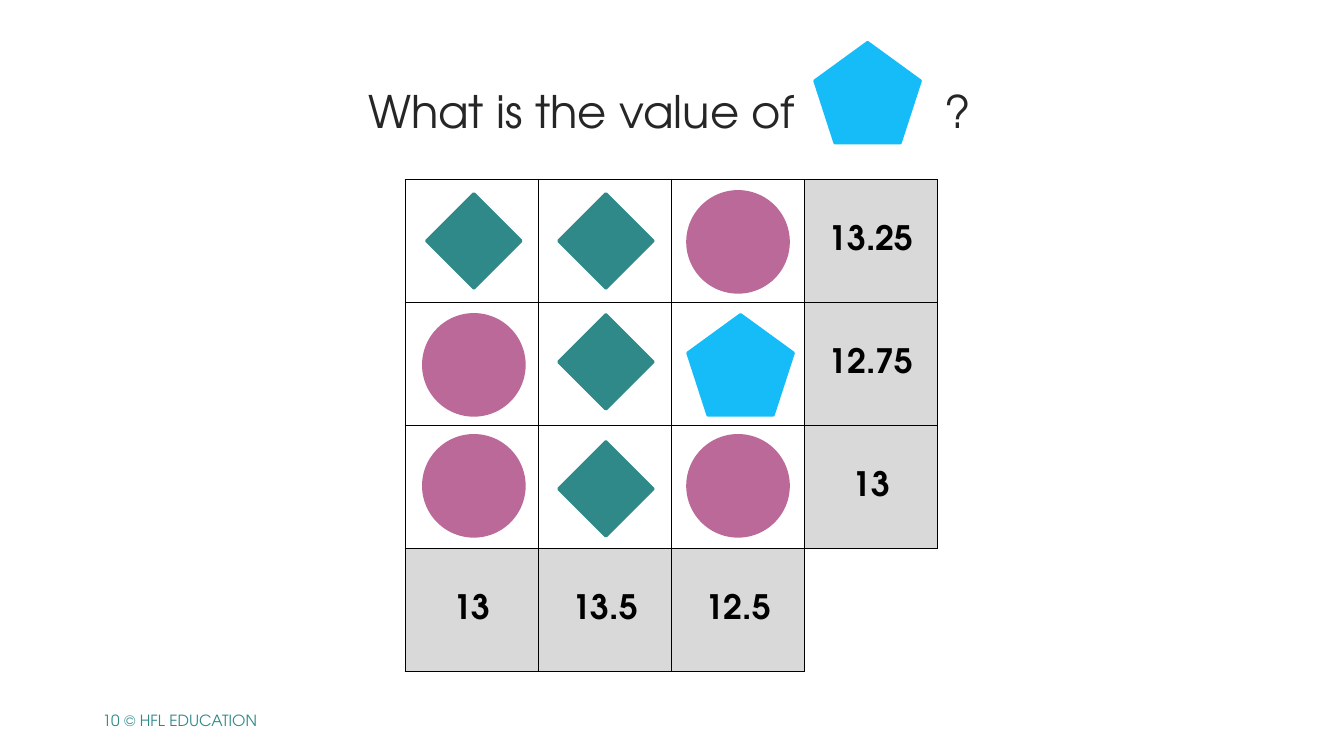
from typing import NamedTuple

from lxml import etree
from pptx import Presentation
from pptx import util as u
from pptx.dml.color import RGBColor
from pptx.enum import shapes, text
from pptx.oxml import ns

FONT = "TeX Gyre Adventor"
COLOURS = {
    "teal": "2F8989",
    "pink": "BB6998",
    "blue": "15BCF8",
    "title": "262626",
    "black": "000000",
    "total": "D9D9D9",
}
GRID_LEFT, GRID_TOP = 4.02, 1.78
COLUMN_WIDTH, ROW_HEIGHT = 1.32, 1.22
TOTALS = [
    ["", "", "", "13.25"],
    ["", "", "", "12.75"],
    ["", "", "", "13"],
    ["13", "13.5", "12.5", ""],
]


class Symbol(NamedTuple):
    preset: shapes.MSO_SHAPE
    colour: str
    width: float
    height: float


class Place(NamedTuple):
    symbol: Symbol
    left: float
    top: float


DIAMOND = Symbol(shapes.MSO_SHAPE.DIAMOND, "teal", 0.94, 0.94)
CIRCLE = Symbol(shapes.MSO_SHAPE.OVAL, "pink", 1, 1)
PENTAGON = Symbol(shapes.MSO_SHAPE.REGULAR_PENTAGON, "blue", 1.05, 1)

PLACES = [
    Place(DIAMOND, 4.23, 1.92),
    Place(DIAMOND, 5.54, 1.92),
    Place(DIAMOND, 5.54, 3.12),
    Place(DIAMOND, 5.54, 4.38),
    Place(CIRCLE, 4.2, 3.12),
    Place(CIRCLE, 4.2, 4.32),
    Place(CIRCLE, 6.82, 1.9),
    Place(CIRCLE, 6.82, 4.32),
    Place(PENTAGON, 6.82, 3.12),
    Place(PENTAGON, 8.08, 0.42),
]


def rgb(name: str) -> RGBColor:
    return RGBColor.from_string(COLOURS[name])


def write(frame, words: str, *, size: float, colour: str, bold: bool = False,
          align=text.PP_ALIGN.LEFT, anchor=text.MSO_ANCHOR.MIDDLE,
          tab: float | None = None):
    """Fill a text frame with one formatted paragraph; tab is a stop in inches."""
    frame.word_wrap = True
    frame.vertical_anchor = anchor
    paragraph = frame.paragraphs[0]
    paragraph.alignment = align
    if tab is not None:
        properties = paragraph._p.get_or_add_pPr()
        stops = etree.SubElement(properties, ns.qn("a:tabLst"))
        etree.SubElement(stops, ns.qn("a:tab"), pos=str(u.Inches(tab)), algn="l")
    run = paragraph.add_run()
    run.text = words
    run.font.name = FONT
    run.font.size = u.Pt(size)
    run.font.bold = bold
    run.font.color.rgb = rgb(colour)
    return paragraph


def set_borders(cell, visible_sides: str) -> None:
    """Draw black borders on the sides named by the letters L, R, T and B."""
    properties = cell._tc.get_or_add_tcPr()
    for index, side in enumerate("LRTB"):
        line = etree.Element(ns.qn(f"a:ln{side}"), w=str(u.Pt(1)))
        if side in visible_sides:
            fill = etree.SubElement(line, ns.qn("a:solidFill"))
            etree.SubElement(fill, ns.qn("a:srgbClr"), val=COLOURS["black"])
        else:
            etree.SubElement(line, ns.qn("a:noFill"))
        properties.insert(index, line)


def add_question(slide) -> None:
    title = slide.shapes.title
    title.left, title.top = u.Inches(0.45), u.Inches(0.84)
    title.width, title.height = u.Inches(12.44), u.Inches(1.42)
    frame = title.text_frame
    frame.auto_size = text.MSO_AUTO_SIZE.NONE
    frame.margin_left = u.Inches(3.2)
    paragraph = write(frame, "What is the value of\t?", size=32, colour="title",
                      anchor=text.MSO_ANCHOR.TOP, tab=5.72)
    paragraph.line_spacing = 0.9
    paragraph.space_after = u.Pt(12)


def add_grid(slide) -> None:
    size = len(TOTALS)
    table = slide.shapes.add_table(
        size, size, u.Inches(GRID_LEFT), u.Inches(GRID_TOP),
        u.Inches(size * COLUMN_WIDTH), u.Inches(size * ROW_HEIGHT)).table
    table.first_row = table.horz_banding = False
    for column in table.columns:
        column.width = u.Inches(COLUMN_WIDTH)
    for row in table.rows:
        row.height = u.Inches(ROW_HEIGHT)
    for row_index, totals in enumerate(TOTALS):
        for column_index, total in enumerate(totals):
            cell = table.cell(row_index, column_index)
            if total:
                cell.fill.solid()
                cell.fill.fore_color.rgb = rgb("total")
                write(cell.text_frame, total, size=24, colour="black", bold=True,
                      align=text.PP_ALIGN.CENTER)
                cell.vertical_anchor = text.MSO_ANCHOR.MIDDLE
            else:
                cell.fill.background()
            corner = row_index == column_index == size - 1
            set_borders(cell, "LT" if corner else "LRTB")


def add_symbol(slide, place: Place) -> None:
    symbol = place.symbol
    shape = slide.shapes.add_shape(
        symbol.preset, u.Inches(place.left), u.Inches(place.top),
        u.Inches(symbol.width), u.Inches(symbol.height))
    shape.shadow.inherit = False
    shape.fill.solid()
    shape.fill.fore_color.rgb = rgb(symbol.colour)
    shape.line.color.rgb = rgb(symbol.colour)
    shape.line.width = u.Pt(2)


def main() -> None:
    presentation = Presentation()
    presentation.slide_width = u.Inches(13.33)
    presentation.slide_height = u.Inches(7.5)
    slide = presentation.slides.add_slide(
        presentation.slide_layouts.get_by_name("Title Only"))
    footer = slide.shapes.add_textbox(
        u.Inches(0.92), u.Inches(6.95), u.Inches(2.75), u.Inches(0.4))
    write(footer.text_frame, "10 © HFL EDUCATION", size=11, colour="teal")
    add_question(slide)
    add_grid(slide)
    for place in PLACES:
        add_symbol(slide, place)
    presentation.save("out.pptx")


if __name__ == "__main__":
    main()
